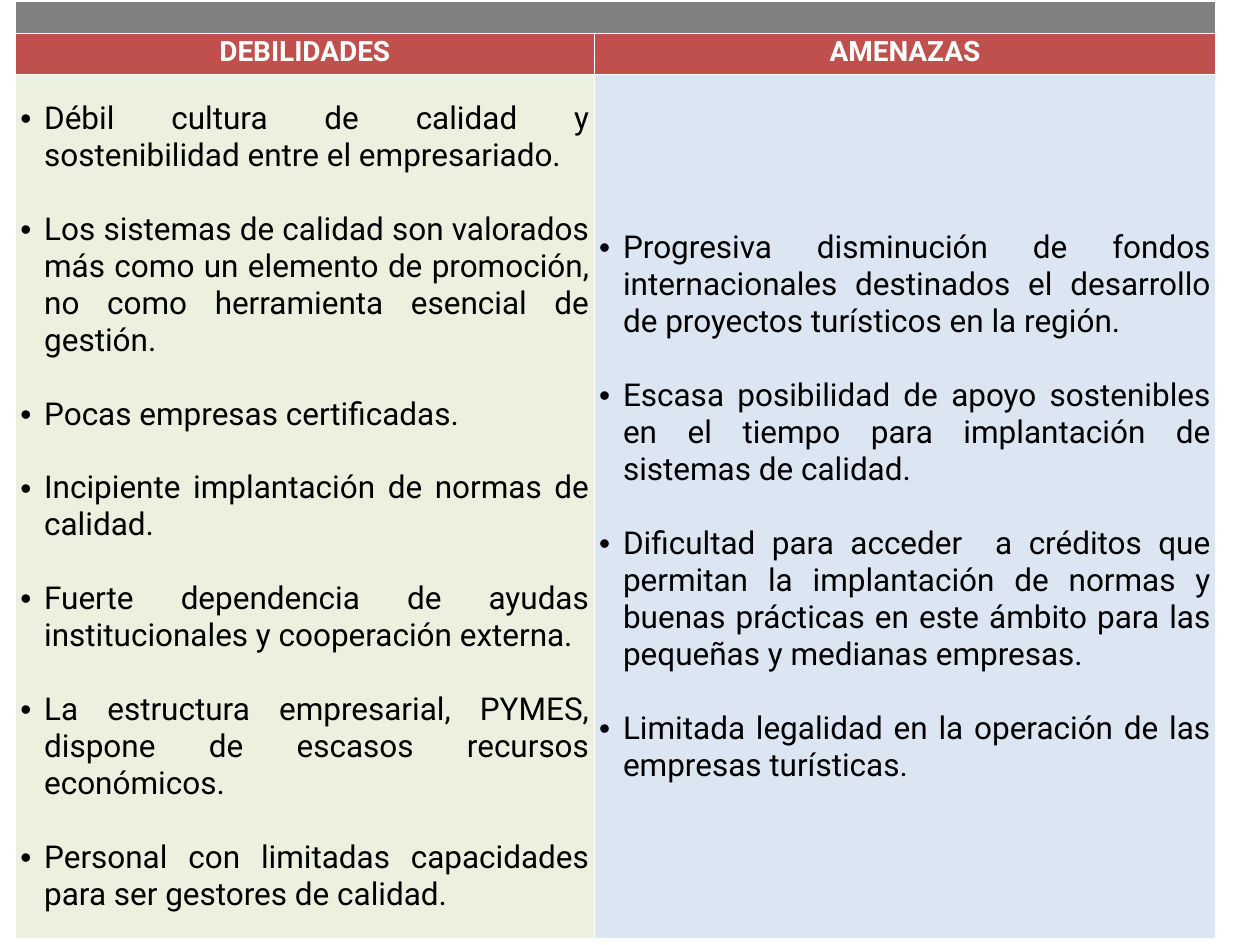
from lxml.etree import SubElement
from pptx import Presentation
from pptx.dml.color import RGBColor
from pptx.enum.text import MSO_ANCHOR, PP_ALIGN
from pptx.oxml.ns import qn
from pptx.util import Cm, Pt

COLUMNS = [
    {"heading": "DEBILIDADES", "width": 11.67, "fill": "EBF1DE", "points": [
        "Débil cultura de calidad y sostenibilidad entre el empresariado.",
        "Los sistemas de calidad son valorados más como un elemento de promoción, "
        "no como herramienta esencial de gestión.",
        "Pocas empresas certificadas.",
        "Incipiente implantación de normas de calidad.",
        "Fuerte dependencia de ayudas institucionales y cooperación externa.",
        "La estructura empresarial, PYMES, dispone de escasos recursos económicos.",
        "Personal con limitadas capacidades para ser gestores de calidad.",
    ]},
    {"heading": "AMENAZAS", "width": 12.53, "fill": "DCE6F2", "points": [
        "Progresiva disminución de fondos internacionales destinados el desarrollo "
        "de proyectos turísticos en la región.",
        "Escasa posibilidad de apoyo sostenibles en el tiempo para implantación "
        "de sistemas de calidad.",
        "Dificultad para acceder  a créditos que permitan la implantación de normas y "
        "buenas prácticas en este ámbito para las pequeñas y medianas empresas.",
        "Limitada legalidad en la operación de las empresas turísticas.",
    ]},
]
ROW_HEIGHTS = [0.65, 0.82, 17.43]
LEFT, TOP = 0.31, 0.03
INDENT = Cm(0.48)


def rgb(value):
    return RGBColor.from_string(value)


def format_cell(cell, fill):
    cell.margin_left = cell.margin_right = Cm(0.1)
    cell.margin_top = cell.margin_bottom = 0
    cell.vertical_anchor = MSO_ANCHOR.MIDDLE
    tc_pr = cell._tc.get_or_add_tcPr()
    for side in "LRTB":
        ln = SubElement(tc_pr, qn(f"a:ln{side}"), w=str(Pt(1)))
        SubElement(SubElement(ln, qn("a:solidFill")), qn("a:srgbClr"), val="FFFFFF")
    cell.fill.solid()
    cell.fill.fore_color.rgb = rgb(fill)


def write(tf, texts, size=18, color="000000", bold=False, align=PP_ALIGN.JUSTIFY,
          bullet=False, line=None, gap=0):
    for i, text in enumerate(texts):
        p = tf.add_paragraph() if i else tf.paragraphs[0]
        p.alignment = align
        if line:
            p.line_spacing = Pt(line)
        if i:
            p.space_before = Pt(gap)
        if bullet:
            p_pr = p._p.get_or_add_pPr()
            p_pr.set("marL", str(INDENT))
            p_pr.set("indent", str(-INDENT))
            SubElement(p_pr, qn("a:buFont"), typeface="Arial")
            SubElement(p_pr, qn("a:buChar"), char="•")
        r = p.add_run()
        r.text = text
        r.font.name = "Roboto"
        r.font.size = Pt(size)
        r.font.bold = bold
        r.font.color.rgb = rgb(color)


def main():
    prs = Presentation()
    prs.slide_width, prs.slide_height = Cm(25.4), Cm(19.05)
    s = prs.slides.add_slide(prs.slide_layouts[6])
    width = sum(column["width"] for column in COLUMNS)
    table = s.shapes.add_table(len(ROW_HEIGHTS), len(COLUMNS), Cm(LEFT), Cm(TOP),
                               Cm(width), Cm(sum(ROW_HEIGHTS))).table
    for row, height in zip(table.rows, ROW_HEIGHTS):
        row.height = Cm(height)

    for i, column in enumerate(COLUMNS):
        table.columns[i].width = Cm(column["width"])
        band, heading, body = (table.cell(row, i) for row in range(3))
        format_cell(band, "808080")
        SubElement(band.text_frame.paragraphs[0]._p, qn("a:endParaRPr"), sz="1000")
        format_cell(heading, "C0504D")
        write(heading.text_frame, [column["heading"]], size=16, color="FFFFFF",
              bold=True, align=PP_ALIGN.CENTER, line=16)
        format_cell(body, column["fill"])
        write(body.text_frame, column["points"], bullet=True, gap=21.1)
    table.cell(0, 0).merge(table.cell(0, len(COLUMNS) - 1))
    prs.save("out.pptx")


if __name__ == "__main__":
    main()
